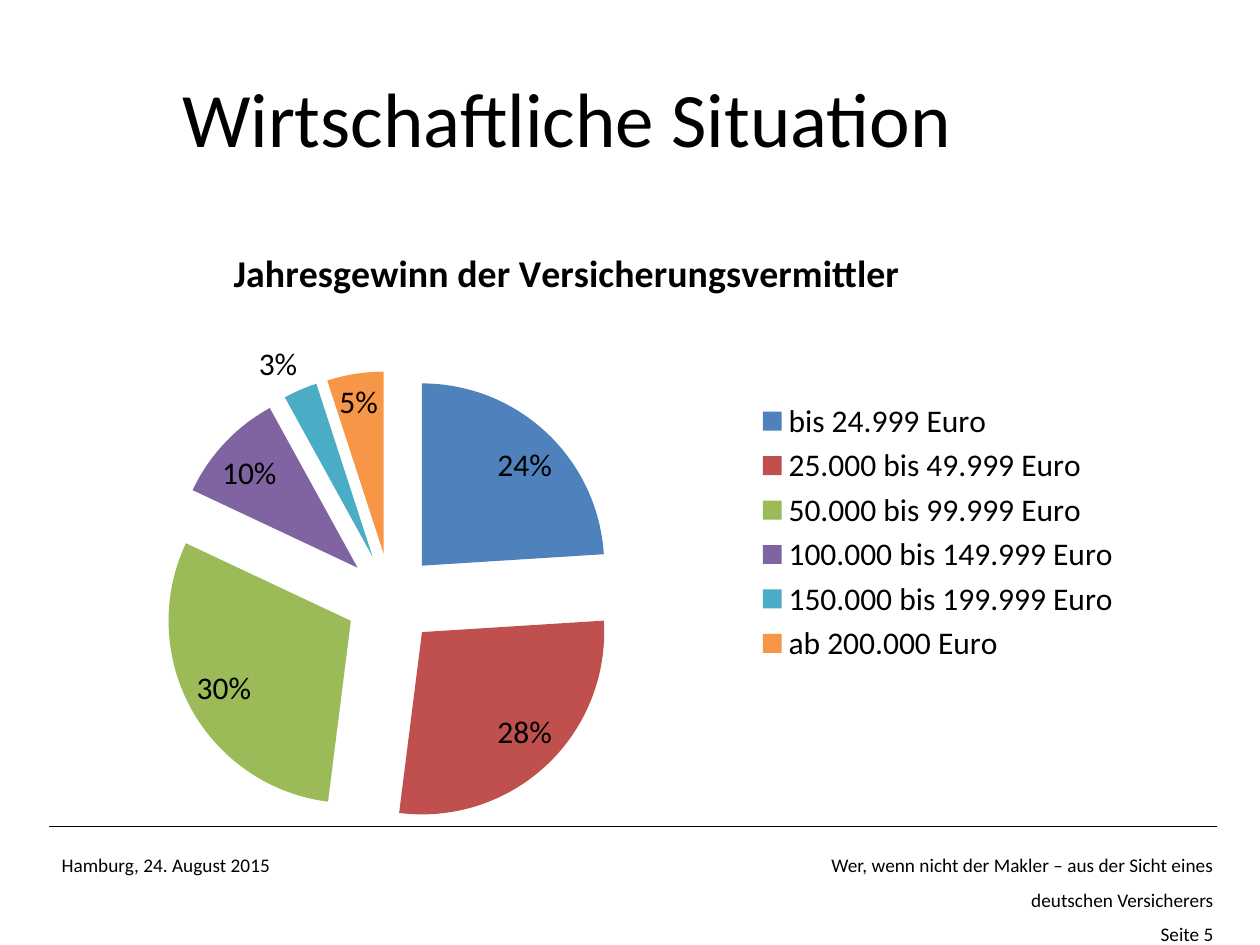
import pptx
import pptx.chart.data
import pptx.dml.color
import pptx.enum.chart
import pptx.enum.shapes
import pptx.enum.text
import pptx.oxml
import pptx.oxml.ns
import pptx.util

WIDTH, HEIGHT = 10, 7.5
CONTENT_WIDTH = 0.9 * WIDTH
MARGIN = 0.39
FOOTER_TOP = 6.63
FONT = "Calibri"
BLACK = "000000"
CHART_TITLE = "Jahresgewinn der Versicherungsvermittler"
PROFIT_SHARES = [
    ("bis 24.999 Euro", 0.24, "4F81BD"),
    ("25.000 bis 49.999 Euro", 0.28, "C0504D"),
    ("50.000 bis 99.999 Euro", 0.30, "9BBB59"),
    ("100.000 bis 149.999 Euro", 0.10, "8064A2"),
    ("150.000 bis 199.999 Euro", 0.03, "4BACC6"),
    ("ab 200.000 Euro", 0.05, "F79646"),
]


def color(value):
    return pptx.dml.color.RGBColor.from_string(value)


def box(*lengths):
    return [pptx.util.Inches(length) for length in lengths]


def format_font(font, size, bold=False):
    font.name = FONT
    font.size = pptx.util.Pt(size)
    font.bold = bold
    font.color.rgb = color(BLACK)


def add_run(paragraph, text, size):
    run = paragraph.add_run()
    run.text = text
    format_font(run.font, size)


def set_title(slide, text):
    title = slide.shapes.title
    title.left, title.top, title.width, title.height = box(0, 0.3, CONTENT_WIDTH, 1.25)
    title.text_frame.vertical_anchor = pptx.enum.text.MSO_ANCHOR.MIDDLE
    paragraph = title.text_frame.paragraphs[0]
    paragraph.alignment = pptx.enum.text.PP_ALIGN.CENTER
    add_run(paragraph, text, 44)


def add_rule(slide, left, right, y):
    rule = slide.shapes.add_connector(
        pptx.enum.shapes.MSO_CONNECTOR.STRAIGHT, *box(left, y, right, y))
    rule.line.color.rgb = color(BLACK)
    rule.line.width = pptx.util.Pt(0.75)
    rule._element.spPr.append(pptx.oxml.parse_xml(
        f"<a:effectLst {pptx.oxml.ns.nsdecls('a')}/>"))


def hang_indent(paragraph, indent):
    properties = paragraph._p.get_or_add_pPr()
    distance = pptx.util.Inches(indent)
    properties.set("marL", str(distance))
    properties.set("indent", str(-distance))
    properties.append(pptx.oxml.parse_xml(
        f"<a:tabLst {pptx.oxml.ns.nsdecls('a')}>"
        f'<a:tab pos="{distance}" algn="l"/></a:tabLst>'))


def add_footer(slide, lines, left, width, height, wrap=False, indent=0):
    frame = slide.shapes.add_textbox(*box(left, FOOTER_TOP, width, height)).text_frame
    frame.word_wrap = wrap
    frame.auto_size = pptx.enum.text.MSO_AUTO_SIZE.SHAPE_TO_FIT_TEXT
    for index, line in enumerate(lines):
        paragraph = frame.add_paragraph() if index else frame.paragraphs[0]
        if indent:
            hang_indent(paragraph, indent)
            paragraph.alignment = pptx.enum.text.PP_ALIGN.RIGHT
        paragraph.line_spacing = 1.5
        add_run(paragraph, line, 11)


def add_pie(slide, title, shares, explosion):
    data = pptx.chart.data.CategoryChartData(number_format="0%")
    data.categories = [label for label, _, _ in shares]
    data.add_series(title, [value for _, value, _ in shares])
    chart = slide.shapes.add_chart(
        pptx.enum.chart.XL_CHART_TYPE.PIE, *box(0, 1.75, CONTENT_WIDTH, 4.95), data).chart
    format_font(chart.font, 18)

    # Title and legend
    chart.has_title = True
    run = chart.chart_title.text_frame.paragraphs[0].add_run()
    run.text = title
    format_font(run.font, 21.6, bold=True)
    chart.chart_title.include_in_layout = False
    chart.has_legend = True
    chart.legend.position = pptx.enum.chart.XL_LEGEND_POSITION.RIGHT
    chart.legend.include_in_layout = False
    format_font(chart.legend.font, 18)

    # Slices, pulled apart by a share of the radius
    plot = chart.plots[0]
    plot.vary_by_categories = True
    series = plot.series[0]
    for index, (_, _, fill) in enumerate(shares):
        slice_fill = series.points[index].format.fill
        slice_fill.solid()
        slice_fill.fore_color.rgb = color(fill)
    first_point = series._element.find(pptx.oxml.ns.qn("c:dPt"))
    first_point.addprevious(pptx.oxml.parse_xml(
        f"<c:explosion {pptx.oxml.ns.nsdecls('c')} val=\"{explosion}\"/>"))

    # Value labels
    plot.has_data_labels = True
    labels = plot.data_labels
    labels.show_value = True
    labels.show_percentage = False
    labels.number_format = "0%"
    labels.number_format_is_linked = False
    labels.position = pptx.enum.chart.XL_LABEL_POSITION.BEST_FIT
    format_font(labels.font, 18)


def main():
    presentation = pptx.Presentation()
    presentation.slide_width, presentation.slide_height = box(WIDTH, HEIGHT)
    slide = presentation.slides.add_slide(presentation.slide_layouts[5])

    # Footer
    add_rule(slide, MARGIN, 9.66, 6.56)
    add_footer(slide, ["Hamburg, 24. August 2015"], MARGIN, 1.87, 0.38)
    add_footer(
        slide,
        ["Wer, wenn nicht der Makler – aus der Sicht eines deutschen Versicherers", "Seite 5"],
        6.46, 3.27, 0.93, wrap=True, indent=0.68)

    # Title and chart
    set_title(slide, "Wirtschaftliche Situation")
    add_pie(slide, CHART_TITLE, PROFIT_SHARES, explosion=25)

    presentation.save("out.pptx")


if __name__ == "__main__":
    main()
